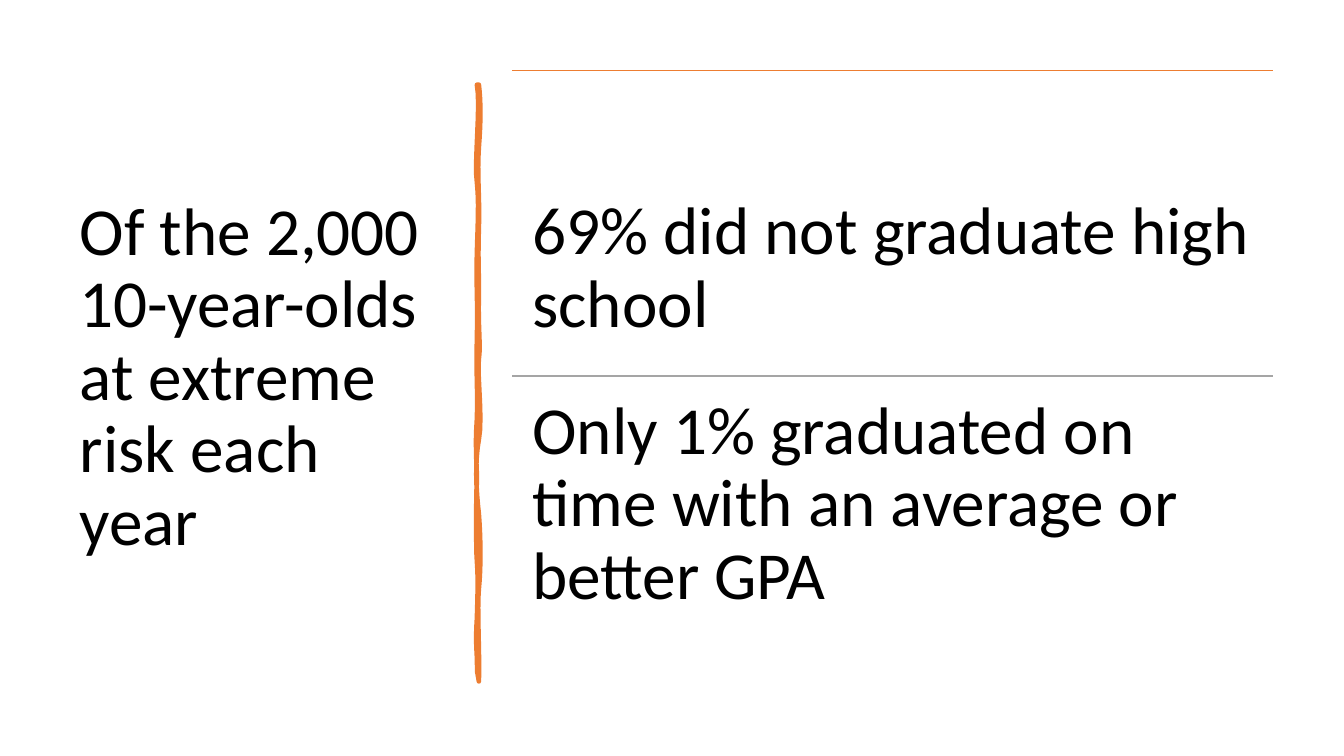
import pptx
import pptx.util
import pptx.dml.color
import pptx.enum.shapes
import pptx.enum.text
import pptx.oxml.ns
from lxml import etree

PX = 9144  # 100 px to the inch
ORANGE, GREY, BLACK = "ED7D31", "A5A5A5", "000000"
FONT = {"name": "Calibri", "size": pptx.util.Pt(48), "bold": False}

# Each curve of an edge: first control point, second control point, end point
RIGHT_EDGE = [
    ((477, 102), (477, 119), (475, 146)),
    ((473, 173), (476, 195), (475, 226)),
    ((474, 257), (475, 262), (475, 294)),
    ((474, 325), (477, 342), (475, 356)),
    ((473, 370), (479, 414), (475, 436)),
    ((471, 457), (472, 484), (475, 510)),
    ((477, 536), (477, 564), (475, 584)),
    ((473, 603), (476, 650), (475, 676)),
]
LEFT_EDGE = [
    ((474, 646), (471, 644), (473, 613)),
    ((474, 583), (474, 570), (473, 557)),
    ((472, 544), (472, 495), (473, 477)),
    ((473, 459), (471, 445), (473, 415)),
    ((474, 386), (472, 373), (473, 335)),
    ((474, 298), (472, 281), (473, 250)),
    ((474, 218), (475, 200), (473, 181)),
    ((470, 163), (477, 104), (473, 84)),
]


def px(length):
    return pptx.util.Emu(round(length * PX))


def color(hex_code):
    return pptx.dml.color.RGBColor.from_string(hex_code)


def write_text(frame, text, anchor, margins):
    """Fill a text frame with one left-aligned paragraph."""
    frame.text = text
    frame_format = {
        "word_wrap": True,
        "auto_size": pptx.enum.text.MSO_AUTO_SIZE.NONE,
        "vertical_anchor": anchor,
    }
    sides = ("margin_left", "margin_top", "margin_right", "margin_bottom")
    frame_format.update(zip(sides, map(px, margins)))
    for name, value in frame_format.items():
        setattr(frame, name, value)
    paragraph = frame.paragraphs[0]
    paragraph.alignment = pptx.enum.text.PP_ALIGN.LEFT
    paragraph.line_spacing = 0.9
    font = paragraph.runs[0].font
    for name, value in FONT.items():
        setattr(font, name, value)
    font.color.rgb = color(BLACK)


def place_title(slide, box, text):
    title = slide.shapes.title
    for name, length in zip(("left", "top", "width", "height"), box):
        setattr(title, name, px(length))
    write_text(title.text_frame, text, pptx.enum.text.MSO_ANCHOR.MIDDLE, (10, 5, 10, 5))


def curve_points(start, curves, steps=8):
    """Sample a chain of cubic curves as points in EMU."""
    points = []
    for first, second, end in curves:
        for step in range(1, steps + 1):
            t = step / steps
            weights = ((1 - t) ** 3, 3 * t * (1 - t) ** 2, 3 * t * t * (1 - t), t ** 3)
            knots = (start, first, second, end)
            points.append(tuple(
                px(sum(w * knot[axis] for w, knot in zip(weights, knots)))
                for axis in (0, 1)))
        start = end
    return points


def draw_divider(slide, top_right, bottom_left):
    """Draw the hand-drawn upright bar between title and findings."""
    outline = curve_points(top_right, RIGHT_EDGE) + curve_points(bottom_left, LEFT_EDGE)
    builder = slide.shapes.build_freeform(px(top_right[0]), px(top_right[1]), scale=1.0)
    builder.add_line_segments(outline, close=True)
    divider = builder.convert_to_shape()
    divider.shadow.inherit = False
    divider.fill.solid()
    divider.fill.fore_color.rgb = color(ORANGE)
    divider.line.color.rgb = color(ORANGE)
    divider.line.width = pptx.util.Pt(3.25)


def draw_finding(slide, box, text, rule_color, top_margin):
    """Draw a rule along the top of the box and the finding below it."""
    left, top, width, height = box
    rule = slide.shapes.add_connector(
        pptx.enum.shapes.MSO_CONNECTOR.STRAIGHT,
        px(left), px(top), px(left + width), px(top))
    rule.line.color.rgb = color(rule_color)
    rule.line.width = pptx.util.Pt(1)
    etree.SubElement(rule._element.spPr, pptx.oxml.ns.qn("a:effectLst"))
    finding = slide.shapes.add_textbox(*map(px, box))
    write_text(finding.text_frame, text, pptx.enum.text.MSO_ANCHOR.TOP,
               (20, top_margin, 20, 20))


def draw_findings(slide, box, findings):
    left, top, width, height = box
    row_height = height // len(findings)
    for row, finding in enumerate(findings):
        draw_finding(slide, (left, top + row * row_height, width, row_height), *finding)


def main():
    deck = pptx.Presentation()
    deck.slide_width, deck.slide_height = px(1333), px(750)
    slide = deck.slides.add_slide(deck.slide_layouts.get_by_name("Title Only"))
    place_title(slide, (69, 70, 374, 611),
                "Of the 2,000 10-year-olds at extreme risk each year")
    draw_divider(slide, (475, 84), (473, 676))
    draw_findings(slide, (508, 70, 755, 606), [
        ("69% did not graduate high school", ORANGE, 125),
        ("Only 1% graduated on time with an average or better GPA", GREY, 20),
    ])
    deck.save("out.pptx")


if __name__ == "__main__":
    main()
